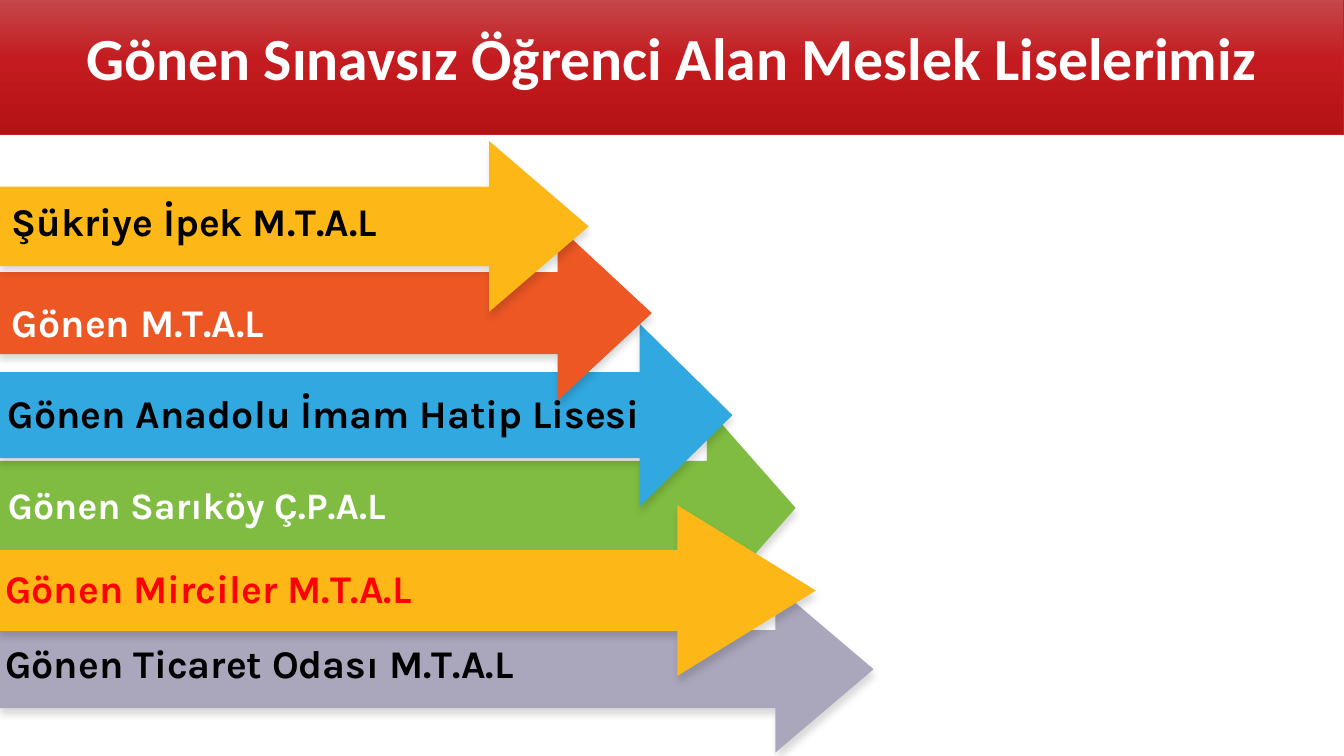
from copy import deepcopy
from dataclasses import dataclass

from lxml import etree
from pptx import Presentation
from pptx.dml.color import RGBColor
from pptx.enum.shapes import MSO_SHAPE
from pptx.enum.text import MSO_ANCHOR, MSO_AUTO_SIZE, PP_ALIGN
from pptx.oxml.ns import qn
from pptx.util import Inches, Pt

RECT = MSO_SHAPE.RECTANGLE
MIDDLE = MSO_ANCHOR.MIDDLE
GROW = MSO_AUTO_SIZE.SHAPE_TO_FIT_TEXT
CENTER = PP_ALIGN.CENTER

COLORS = {
    "white": "FFFFFF", "black": "000000", "red": "FF0000",
    "green": "7FBC41", "blue": "31A8DF", "orange": "EC5724",
    "yellow": "FDB817", "lilac": "AAA7BC",
    "title_top": "C65051", "title_mid": "C31B1F",
    "title_end": "B41215", "title_line": "BB2326",
}


@dataclass
class School:
    name: str
    fill: str
    ink: str
    left: float
    top: float
    height: float
    shaft: float
    neck: float
    tip: float
    text_left: float
    text_top: float
    text_width: float
    size: int = 21


# Each group draws its arrows first, then its names on top.
GROUPS = [
    [
        School("Gönen Sarıköy Ç.P.A.L", "green", "white",
               -0.01, 3.03, 1.5, 0.7, 5.26, 5.92, -0.04, 3.54, 6.7, 20),
        School("Gönen Anadolu İmam Hatip Lisesi", "blue", "black",
               -0.01, 2.41, 1.36, 0.64, 4.76, 5.45, -0.04, 2.85, 5.7),
        School("Gönen M.T.A.L", "orange", "white",
               -0.01, 1.68, 1.3, 0.61, 4.15, 4.85, -0.01, 2.17, 5.11),
        School("Şükriye İpek M.T.A.L", "yellow", "black",
               0, 1.05, 1.27, 0.59, 3.64, 4.38, -0.01, 1.42, 4.01),
    ],
    [
        School("Gönen Ticaret Odası M.T.A.L", "lilac", "black",
               0, 4.36, 1.24, 0.58, 5.77, 6.5, -0.06, 4.71, 5.79),
        School("Gönen Mirciler M.T.A.L", "yellow", "red",
               -0.01, 3.76, 1.27, 0.6, 5.04, 6.07, -0.06, 4.15, 4.01),
    ],
]


def rgb(name: str) -> RGBColor:
    return RGBColor.from_string(COLORS[name])


def write(tf, text: str, *, font: str, size: int, color: str,
          align=None, spacing=None) -> None:
    tf.word_wrap = True
    p = tf.paragraphs[0]
    p.alignment = align
    p.line_spacing = spacing
    r = p.add_run()
    r.text = text
    r.font.name = font
    r.font.size = Pt(size)
    r.font.bold = True
    r.font.color.rgb = rgb(color)


def add_soft_shadow(sp) -> None:
    sp.shadow.inherit = False
    effects = sp._element.spPr.find(qn("a:effectLst"))
    shadow = etree.SubElement(effects, qn("a:outerShdw"), blurRad=str(Pt(4)),
                              dist=str(Pt(3)), dir="5400000", rotWithShape="0")
    color = etree.SubElement(shadow, qn("a:srgbClr"), val=COLORS["black"])
    etree.SubElement(color, qn("a:alpha"), val="15000")


def add_title(s, text: str) -> None:
    sp = s.shapes.add_shape(RECT, 0, Inches(-0.09), Inches(10), Inches(1.09))
    sp.shadow.inherit = False
    sp.fill.gradient()
    sp.fill.gradient_angle = 270
    stops = sp._element.spPr.find(".//" + qn("a:gsLst"))
    stops.insert(1, deepcopy(stops[0]))
    names = ("title_top", "title_mid", "title_end")
    for i, (stop, name) in enumerate(zip(sp.fill.gradient_stops, names)):
        stop.position = i / 2
        stop.color.rgb = rgb(name)
    sp.line.color.rgb = rgb("title_line")
    sp.line.width = Pt(0.5)
    sp.text_frame.vertical_anchor = MIDDLE
    write(sp.text_frame, text, font="Calibri", size=32, color="white",
          align=CENTER, spacing=0.9)


def add_arrow(s, school: School) -> None:
    a = school
    mid = a.top + a.height / 2
    upper, lower = mid - a.shaft / 2, mid + a.shaft / 2
    points = [(a.tip, mid), (a.neck, a.top), (a.neck, upper), (a.left, upper),
              (a.left, lower), (a.neck, lower), (a.neck, a.top + a.height)]
    start, *rest = [(Inches(x), Inches(y)) for x, y in points]
    builder = s.shapes.build_freeform(*start)
    builder.add_line_segments(rest, close=True)
    sp = builder.convert_to_shape()
    sp.fill.solid()
    sp.fill.fore_color.rgb = rgb(a.fill)
    sp.line.fill.background()
    add_soft_shadow(sp)


def add_name(s, school: School) -> None:
    box = s.shapes.add_textbox(Inches(school.text_left), Inches(school.text_top),
                               Inches(school.text_width), Inches(0.45))
    write(box.text_frame, school.name, font="Karla", size=school.size,
          color=school.ink)
    box.text_frame.auto_size = GROW


def main() -> None:
    prs = Presentation()
    prs.slide_width = Inches(10)
    prs.slide_height = Inches(10 * 9 / 16)
    s = prs.slides.add_slide(prs.slide_layouts[6])
    add_title(s, "Gönen Sınavsız Öğrenci Alan Meslek Liselerimiz")
    for group in GROUPS:
        for school in group:
            add_arrow(s, school)
        for school in group:
            add_name(s, school)
    prs.save("out.pptx")


if __name__ == "__main__":
    main()
